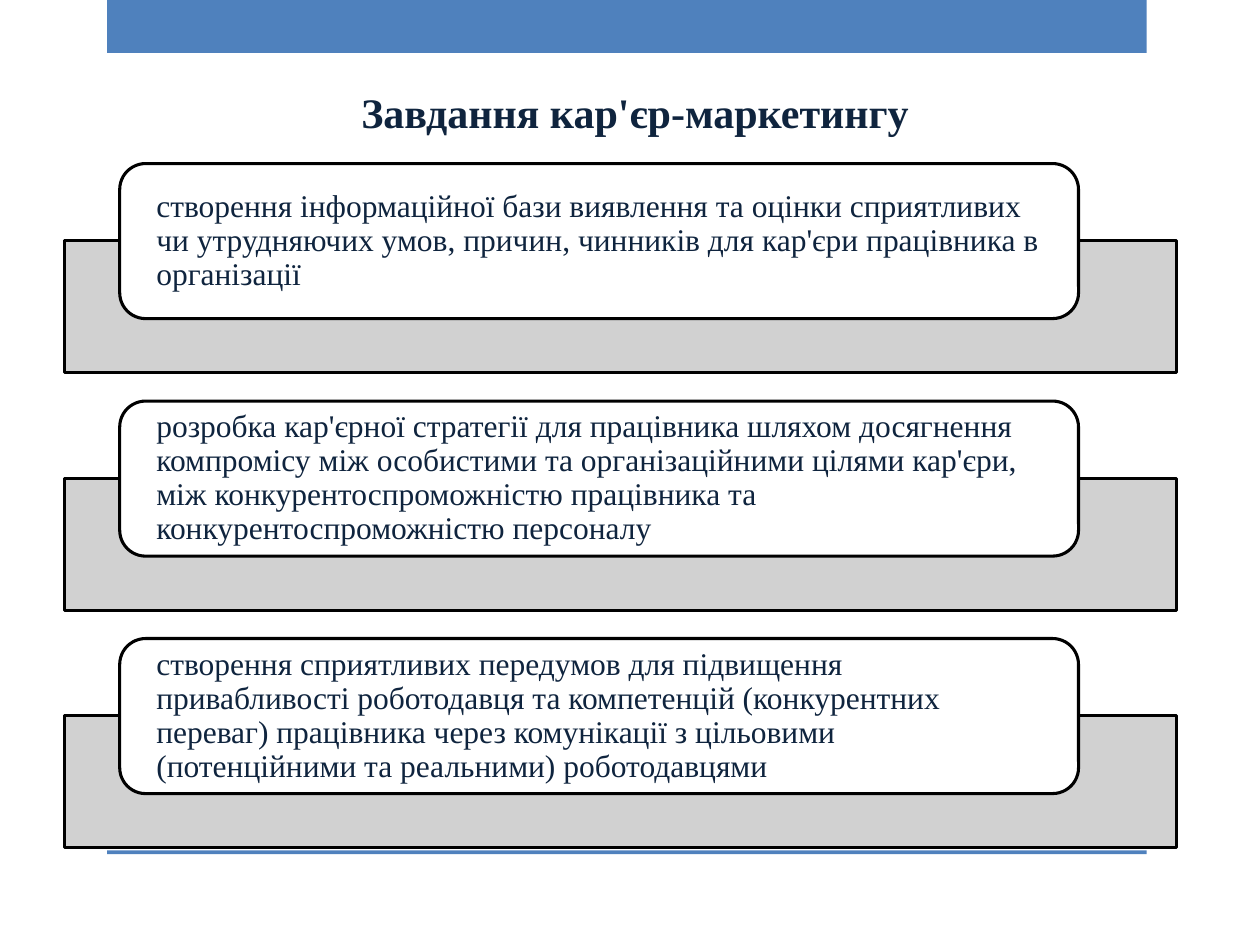
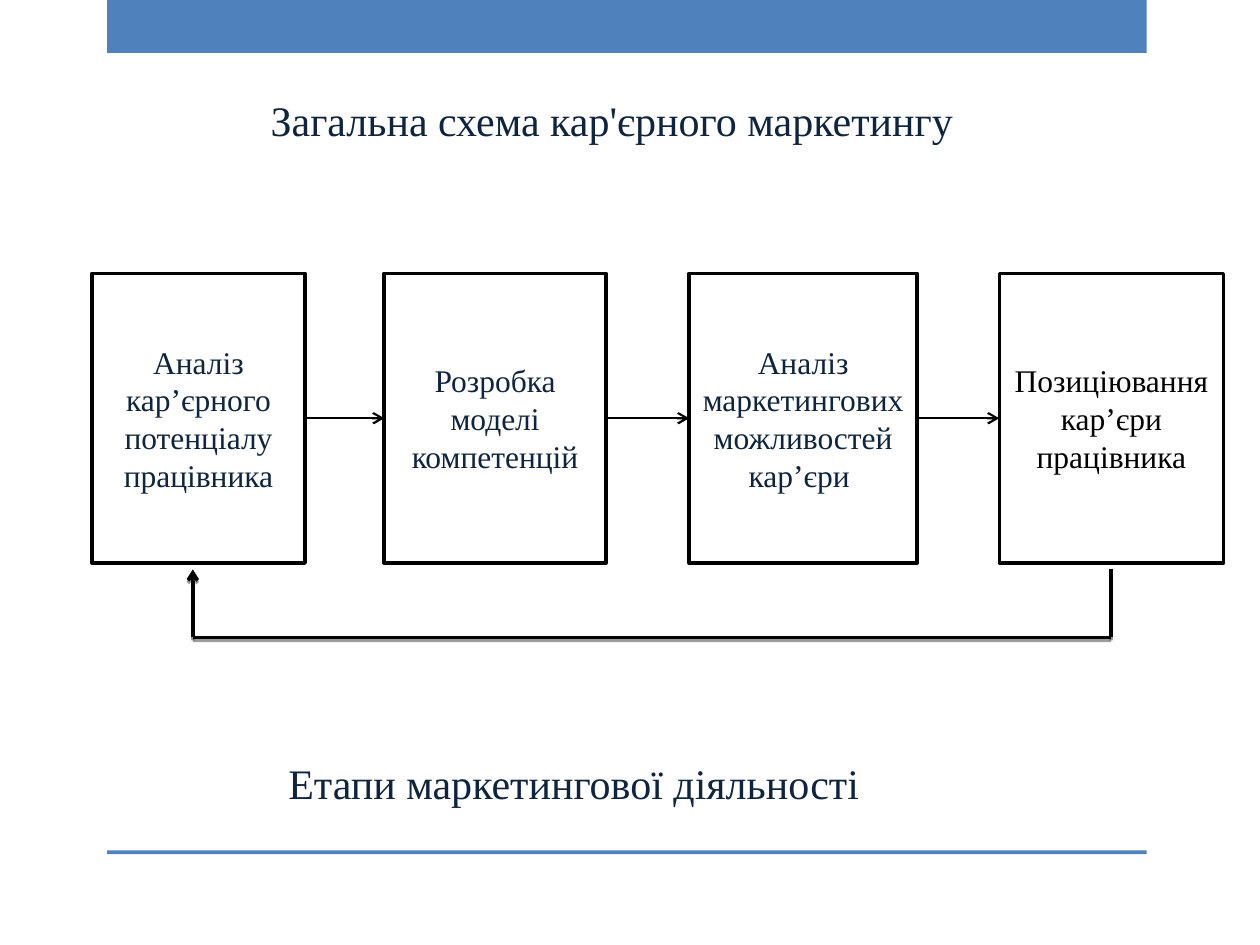
from dataclasses import dataclass
from itertools import pairwise

from lxml.etree import SubElement
from pptx import Presentation
from pptx.dml.color import RGBColor
from pptx.enum.shapes import MSO_CONNECTOR as Connector, MSO_SHAPE as Shape
from pptx.enum.text import MSO_ANCHOR as Anchor, MSO_AUTO_SIZE as AutoSize, PP_ALIGN as Align
from pptx.oxml.ns import qn
from pptx.util import Pt


@dataclass(frozen=True)
class Theme:
    font: str = "Times New Roman"
    accent: str = "4F81BD"
    ink: str = "0F243E"
    black: str = "000000"
    white: str = "FFFFFF"
    grey: str = "CCCCCC"
    title_size: float = 24
    body_size: float = 18
    card_line: float = 1.75
    stage_line: float = 2
    arrow_line: float = 1.25


def color(value):
    return RGBColor.from_string(value)


def apply(target, values):
    for name, value in values.items():
        setattr(target, name, value)


class SlideBuilder:
    def __init__(self, deck, theme):
        self.deck = deck
        self.theme = theme
        self.page = None

    def new_page(self):
        self.page = self.deck.slides.add_slide(self.deck.slide_layouts[6])
        for top, height in ((0, 30.24), (486, 2.16)):
            self.block(Shape.RECTANGLE, 61.2, top, 594, height, self.theme.accent)

    def block(self, kind, left, top, width, height, fill, line=None, opacity=100):
        shape = self.page.shapes.add_shape(kind, Pt(left), Pt(top), Pt(width), Pt(height))
        shape.shadow.inherit = False
        shape.fill.solid()
        shape.fill.fore_color.rgb = color(fill)
        if opacity < 100:
            tint = shape._element.spPr.find(qn("a:solidFill"))[0]
            SubElement(tint, qn("a:alpha"), val=str(opacity * 1000))
        if line:
            shape.line.color.rgb = color(self.theme.black)
            shape.line.width = Pt(line)
        else:
            shape.line.fill.background()
        return shape

    def label(self, shape, text, size, ink=None, bold=False, align=Align.LEFT, spacing=1.0, **frame):
        apply(shape.text_frame, frame)
        para = shape.text_frame.paragraphs[0]
        apply(para, {"alignment": align, "line_spacing": spacing})
        span = para.add_run()
        span.text = text
        apply(span.font, {"name": self.theme.font, "size": Pt(size), "bold": bold})
        span.font.color.rgb = color(ink or self.theme.ink)

    def heading(self, text, left, top, width, bold=False, wrap=False):
        box = self.page.shapes.add_textbox(Pt(left), Pt(top), Pt(width), Pt(36))
        self.label(box, text, self.theme.title_size, bold=bold,
                   word_wrap=wrap, auto_size=AutoSize.SHAPE_TO_FIT_TEXT)

    def card(self, text, top):
        line = self.theme.card_line
        self.block(Shape.RECTANGLE, 36.7, top + 44, 635.8, 75.6, self.theme.grey, line, 90)
        card = self.block(Shape.ROUNDED_RECTANGLE, 68.4, top, 547.9, 88.6, self.theme.white, line)
        self.label(card, text, self.theme.body_size, spacing=0.9, word_wrap=True,
                   vertical_anchor=Anchor.MIDDLE, margin_left=Pt(16.6), margin_right=Pt(16.6),
                   margin_top=0, margin_bottom=0)

    def stage(self, text, left, width, ink):
        box = self.block(Shape.RECTANGLE, left, 156.2, width, 165.6,
                         self.theme.white, self.theme.stage_line)
        self.label(box, text, self.theme.body_size, ink, align=Align.CENTER,
                   word_wrap=True, vertical_anchor=Anchor.MIDDLE)
        return box

    def link(self, start, end, width, arrow=False, shadow=False):
        link = self.page.shapes.add_connector(
            Connector.STRAIGHT, *(Pt(value) for value in (*start, *end)))
        link.line.color.rgb = color(self.theme.black)
        link.line.width = Pt(width)
        if arrow:
            outline = link._element.spPr.find(qn("a:ln"))
            SubElement(outline, qn("a:tailEnd"), type="arrow")
        effects = SubElement(link._element.spPr, qn("a:effectLst"))
        if shadow:
            outer = SubElement(effects, qn("a:outerShdw"), blurRad="0", dist=str(Pt(1.6)),
                               dir="5400000", rotWithShape="0")
            shade = SubElement(outer, qn("a:srgbClr"), val=self.theme.black)
            SubElement(shade, qn("a:alpha"), val="38000")
        return link

    def connect(self, source, target):
        link = self.link((0, 0), (0, 0), self.theme.arrow_line, arrow=True)
        link.begin_connect(source, 3)
        link.end_connect(target, 1)

    def feedback(self, points):
        segments = list(pairwise(points))
        for segment in segments:
            self.link(*segment, self.theme.stage_line, arrow=segment == segments[-1], shadow=True)


def build_tasks(builder):
    tasks = (
        "створення інформаційної бази виявлення та оцінки сприятливих чи утрудняючих умов, "
        "причин, чинників для кар'єри працівника в організації",
        "розробка кар'єрної стратегії для працівника шляхом досягнення компромісу між "
        "особистими та організаційними цілями кар'єри, між конкурентоспроможністю "
        "працівника та конкурентоспроможністю персоналу",
        "створення сприятливих передумов для підвищення привабливості роботодавця та "
        "компетенцій (конкурентних переваг) працівника через комунікації з цільовими "
        "(потенційними та реальними) роботодавцями",
    )
    builder.new_page()
    builder.heading("Завдання кар'єр-маркетингу", 199.4, 46.1, 330.5, bold=True)
    for index, task in enumerate(tasks):
        builder.card(task, 93.5 + index * 135.7)


def build_scheme(builder):
    theme = builder.theme
    stages = (
        ("Аналіз кар’єрного потенціалу працівника", 52.6, 121.7, theme.ink),
        ("Розробка моделі компетенцій", 219.6, 126.7, theme.ink),
        ("Аналіз маркетингових можливостей кар’єри ", 393.8, 130.3, theme.ink),
        ("Позиціювання кар’єри працівника", 571, 128.2, theme.black),
    )
    first, last, top, bottom = 110.2, 635, 325.4, 364.3
    builder.new_page()
    builder.heading("Етапи маркетингової діяльності", 157.7, 429.1, 360, wrap=True)
    boxes = [builder.stage(*stage) for stage in stages]
    builder.feedback(((last, top), (last, bottom), (first, bottom), (first, top)))
    builder.heading("Загальна схема кар'єрного маркетингу", 147.6, 50.4, 408.2)
    for source, target in pairwise(boxes):
        builder.connect(source, target)


def main():
    deck = Presentation()
    apply(deck, {"slide_width": Pt(720), "slide_height": Pt(540)})
    builder = SlideBuilder(deck, Theme())
    build_tasks(builder)
    build_scheme(builder)
    deck.save("out.pptx")


if __name__ == "__main__":
    main()
